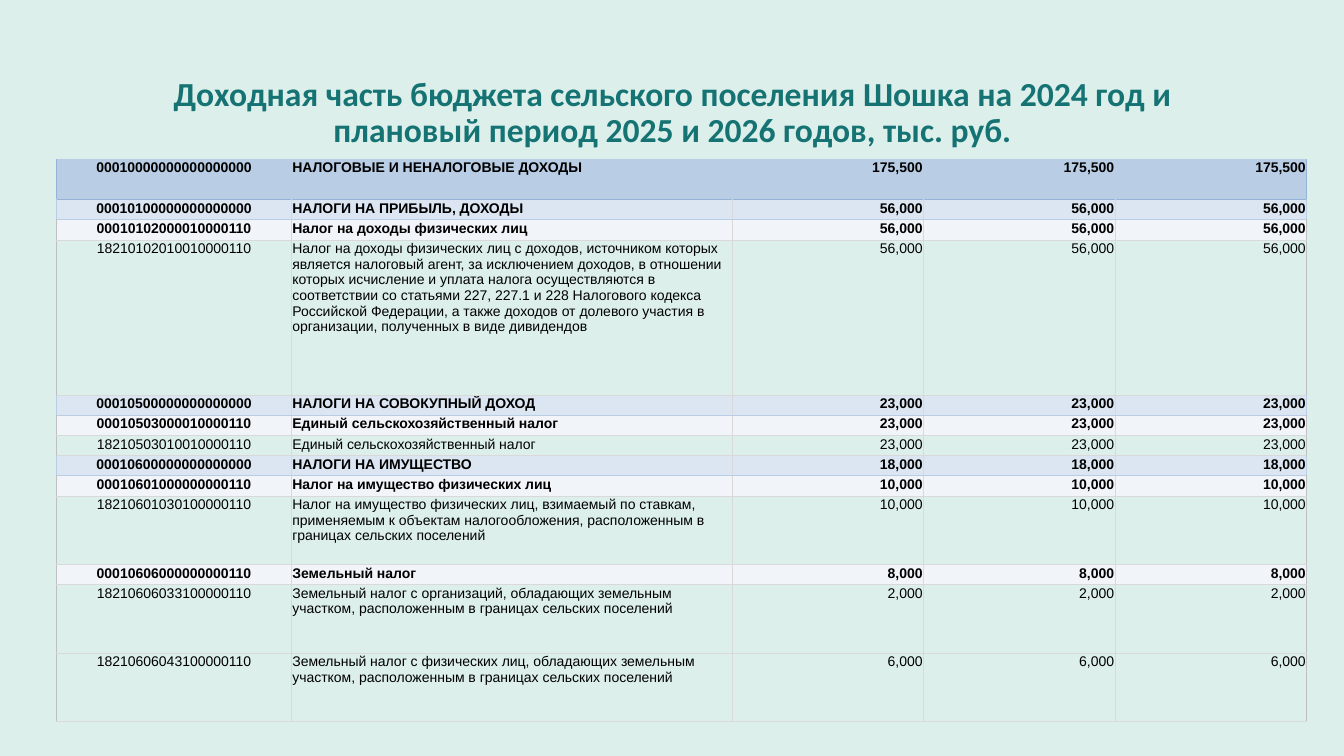
import pptx
import pptx.util
import pptx.dml.color
import pptx.enum.text
import pptx.oxml
import pptx.oxml.ns

Inches = pptx.util.Inches
Pt = pptx.util.Pt
RGBColor = pptx.dml.color.RGBColor
ALIGN = pptx.enum.text.PP_ALIGN
ANCHOR = pptx.enum.text.MSO_ANCHOR

MINT = RGBColor(0xDC, 0xEF, 0xEB)
TEAL = RGBColor(0x16, 0x73, 0x73)
BLACK = RGBColor(0, 0, 0)
STEEL = RGBColor(0x95, 0xB3, 0xD7)
BLUE = RGBColor(0xB9, 0xCD, 0xE5)
PALE = RGBColor(0xDC, 0xE6, 0xF2)
ICE = RGBColor(0xF1, 0xF5, 0xF9)
SILVER = RGBColor(0xBF, 0xBF, 0xBF)
GREY = RGBColor(0xD9, 0xD9, 0xD9)

TITLE = ("Доходная часть бюджета сельского поселения Шошка на 2024 год и "
         "плановый период 2025 и 2026 годов, тыс. руб.")

# Budget levels: fill, bold, side, inner and bottom colours, bottom width
LEVELS = {
    "total": dict(fill=BLUE, bold=True, side=STEEL, inner=None, base=(STEEL, 1)),
    "group": dict(fill=PALE, bold=True, side=BLUE, inner=GREY, base=(BLUE, 0.5)),
    "tax": dict(fill=ICE, bold=True, side=SILVER, inner=GREY, base=(GREY, 0.5)),
    "item": dict(fill=None, bold=False, side=SILVER, inner=GREY, base=(GREY, 0.5)),
}

COLS = [2.33, 4.37, 1.9, 1.9, 1.9]
ALIGNS = [ALIGN.CENTER, ALIGN.LEFT] + [ALIGN.RIGHT] * 3

# Level, row height, code, name, amount (the same in all three years)
ROWS = [
    ("total", 0.4, "00010000000000000000", "НАЛОГОВЫЕ И НЕНАЛОГОВЫЕ ДОХОДЫ", "175,500"),
    ("group", 0.2, "00010100000000000000", "НАЛОГИ НА ПРИБЫЛЬ, ДОХОДЫ", "56,000"),
    ("tax", 0.2, "00010102000010000110", "Налог на доходы физических лиц", "56,000"),
    ("item", 1.54, "18210102010010000110",
     "Налог на доходы физических лиц с доходов, источником которых является "
     "налоговый агент, за исключением доходов, в отношении которых исчисление и "
     "уплата налога осуществляются в соответствии со статьями 227, 227.1 и 228 "
     "Налогового кодекса Российской Федерации, а также доходов от долевого "
     "участия в организации, полученных в виде дивидендов", "56,000"),
    ("group", 0.2, "00010500000000000000", "НАЛОГИ НА СОВОКУПНЫЙ ДОХОД", "23,000"),
    ("tax", 0.2, "00010503000010000110", "Единый сельскохозяйственный налог", "23,000"),
    ("item", 0.2, "18210503010010000110", "Единый сельскохозяйственный налог", "23,000"),
    ("group", 0.2, "00010600000000000000", "НАЛОГИ НА ИМУЩЕСТВО", "18,000"),
    ("tax", 0.2, "00010601000000000110", "Налог на имущество физических лиц", "10,000"),
    ("item", 0.68, "18210601030100000110",
     "Налог на имущество физических лиц, взимаемый по ставкам, применяемым к "
     "объектам налогообложения, расположенным в границах сельских поселений",
     "10,000"),
    ("tax", 0.2, "00010606000000000110", "Земельный налог", "8,000"),
    ("item", 0.68, "18210606033100000110",
     "Земельный налог с организаций, обладающих земельным участком, "
     "расположенным в границах сельских поселений", "2,000"),
    ("item", 0.68, "18210606043100000110",
     "Земельный налог с физических лиц, обладающих земельным участком, "
     "расположенным в границах сельских поселений", "6,000"),
]


def style(thing, values):
    for key, value in values.items():
        setattr(thing, key, value)


def write(par, text, align, font, color):
    par.text = text
    par.alignment = align
    style(par.runs[0].font, font)
    par.runs[0].font.color.rgb = color


def edge(cell, side, color, width=0.5):
    """Draw one border of a cell, or clear it when there is no colour."""
    paint = "<a:noFill/>"
    if color is not None:
        paint = f'<a:solidFill><a:srgbClr val="{color}"/></a:solidFill>'
    line = (f'<a:ln{side} {pptx.oxml.ns.nsdecls("a")} w="{Pt(width)}">'
            f"{paint}</a:ln{side}>")
    cell._tc.get_or_add_tcPr().append(pptx.oxml.parse_xml(line))


def add_title(slide):
    box = slide.shapes.add_textbox(Inches(0.92), Inches(0.4), Inches(11.5), Inches(1.45))
    style(box.text_frame, dict(word_wrap=True, vertical_anchor=ANCHOR.MIDDLE))
    par = box.text_frame.paragraphs[0]
    par.line_spacing = 0.9
    write(par, TITLE, ALIGN.CENTER, dict(name="Calibri", size=Pt(24), bold=True), TEAL)


def fill_cell(cell, text, col, level, top):
    style(cell, dict(margin_left=Inches(0.01), margin_right=Inches(0.01),
                     margin_top=Inches(0.01), margin_bottom=0,
                     vertical_anchor=ANCHOR.TOP))
    font = dict(name="Arial", size=Pt(10), bold=level["bold"])
    write(cell.text_frame.paragraphs[0], text, ALIGNS[col], font, BLACK)
    # Borders come before the fill
    last = len(COLS) - 1
    edge(cell, "L", level["side"] if col == 0 else level["inner"])
    edge(cell, "R", level["side"] if col == last else level["inner"])
    edge(cell, "T", *top)
    edge(cell, "B", *level["base"])
    if level["fill"] is None:
        cell.fill.background()
    else:
        cell.fill.solid()
        cell.fill.fore_color.rgb = level["fill"]


def add_budget(slide):
    frame = slide.shapes.add_table(len(ROWS), len(COLS), Inches(0.56), Inches(1.58),
                                   Inches(12.4), Inches(5.61))
    table = frame.table
    style(table, dict(first_row=False, horz_banding=False))
    for col, width in zip(table.columns, COLS):
        col.width = Inches(width)
    top = (None,)
    for row, (kind, height, code, name, sum_) in zip(table.rows, ROWS):
        row.height = Inches(height)
        level = LEVELS[kind]
        for col, text in enumerate([code, name] + [sum_] * 3):
            fill_cell(row.cells[col], text, col, level, top)
        top = level["base"]


def main():
    deck = pptx.Presentation()
    style(deck, dict(slide_width=Inches(13.33), slide_height=Inches(7.5)))
    slide = deck.slides.add_slide(deck.slide_layouts[6])
    slide.background.fill.solid()
    slide.background.fill.fore_color.rgb = MINT
    add_title(slide)
    add_budget(slide)
    deck.save("out.pptx")


if __name__ == "__main__":
    main()
